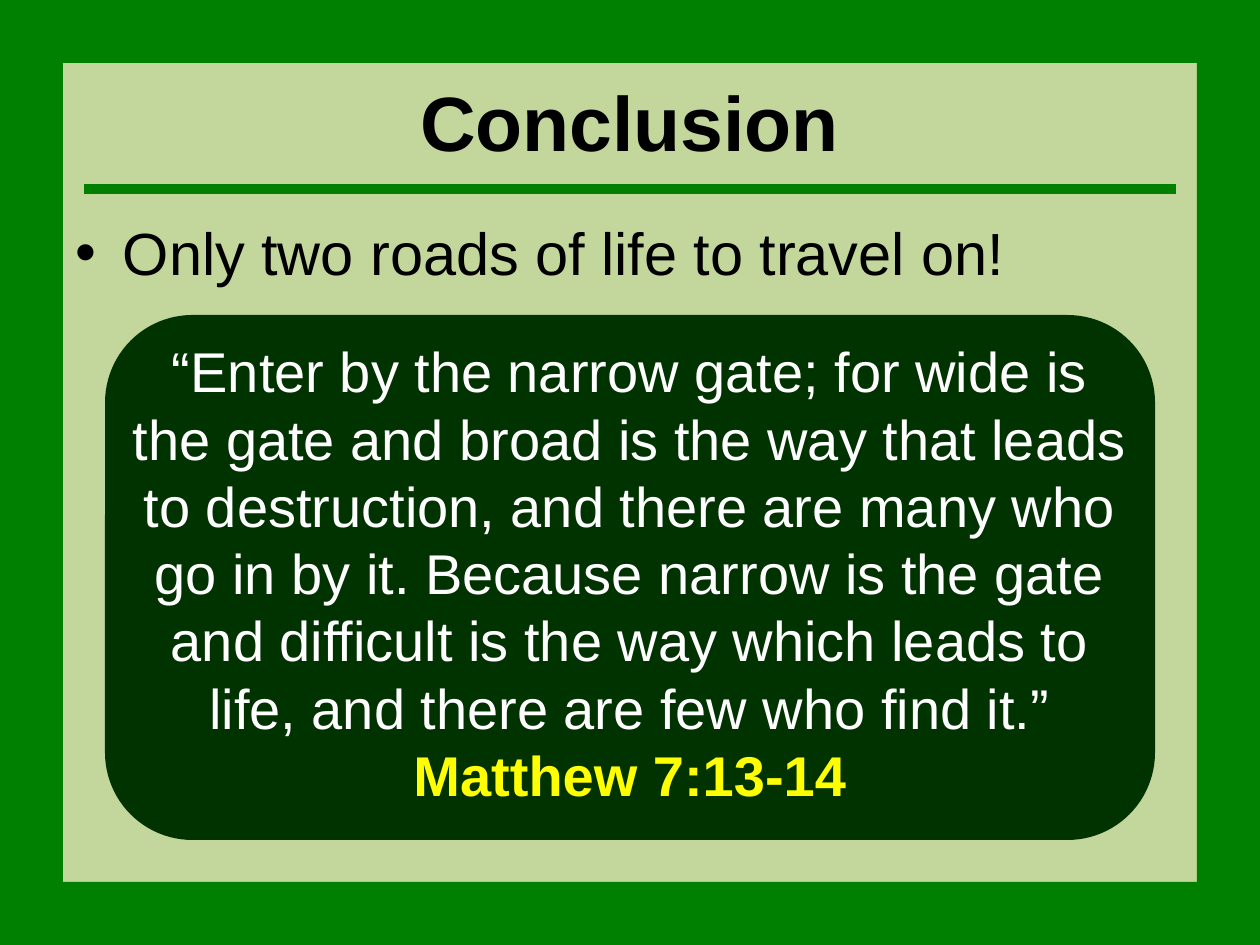
from dataclasses import dataclass

from lxml import etree
from pptx import Presentation
from pptx.dml.color import RGBColor
from pptx.enum.shapes import MSO_CONNECTOR, MSO_SHAPE
from pptx.enum.text import MSO_ANCHOR, MSO_AUTO_SIZE, PP_ALIGN
from pptx.oxml.ns import qn
from pptx.util import Pt

RECT, ROUND = MSO_SHAPE.RECTANGLE, MSO_SHAPE.ROUNDED_RECTANGLE
STRAIGHT = MSO_CONNECTOR.STRAIGHT
CENTER, LEFT = PP_ALIGN.CENTER, PP_ALIGN.LEFT
MIDDLE, TOP = MSO_ANCHOR.MIDDLE, MSO_ANCHOR.TOP
FIXED = MSO_AUTO_SIZE.NONE


@dataclass(frozen=True)
class Theme:
    """Hold the colours, font and type sizes."""
    back: str = "C3D69B"
    edge: str = "008000"
    panel: str = "003300"
    ink: str = "000000"
    light: str = "FFFFFF"
    accent: str = "FFFF00"
    font: str = "Arial"
    title: int = 44
    body: int = 34
    quote: int = 32


THEME = Theme()


def place(item, box):
    """Move an item to a box of left, top, width and height in points."""
    item.left, item.top, item.width, item.height = map(Pt, box)


def paint(fill, color):
    """Set a solid fill."""
    fill.solid()
    fill.fore_color.rgb = RGBColor.from_string(color)


def add_run(para, text, size, color, bold=False):
    """Add one styled run to a paragraph."""
    run = para.add_run()
    run.text = text
    font = run.font
    font.name, font.size, font.bold = THEME.font, Pt(size), bold
    font.color.rgb = RGBColor.from_string(color)


def add_block(slide, kind, box, color):
    """Draw a plain filled shape."""
    block = slide.shapes.add_shape(kind, *map(Pt, box))
    block.shadow.inherit = False
    paint(block.fill, color)
    block.line.fill.background()


def add_frame(slide, box, thick):
    """Draw four bars along the inside of the box."""
    left, top, width, height = box
    bars = (
        (left, top, thick, height),
        (left, top, width, thick),
        (left + width - thick, top, thick, height),
        (left, top + height - thick, width, thick),
    )
    for bar in bars:
        add_block(slide, RECT, bar, THEME.edge)


def add_head(slide, box, text):
    """Fill the title and draw the rule beneath it."""
    left, top, width, height = box
    head = slide.shapes.title
    place(head, box)
    frame = head.text_frame
    frame.auto_size, frame.vertical_anchor = FIXED, MIDDLE
    para = frame.paragraphs[0]
    para.alignment = CENTER
    add_run(para, text, THEME.title, THEME.ink, True)
    inset, base = 12, top + height + 6
    ends = (left + inset, base, left + width - inset, base)
    rule = slide.shapes.add_connector(STRAIGHT, *map(Pt, ends))
    rule.line.width = Pt(6)
    rule.line.color.rgb = RGBColor.from_string(THEME.edge)
    etree.SubElement(rule._element.spPr, qn("a:effectLst"))


def add_list(slide, box, items):
    """Fill the body placeholder with bulleted items."""
    body = slide.placeholders[1]
    place(body, box)
    frame = body.text_frame
    frame.auto_size, frame.vertical_anchor = FIXED, TOP
    for index, text in enumerate(items):
        para = frame.add_paragraph() if index else frame.paragraphs[0]
        para.alignment = LEFT
        para.space_before = Pt(THEME.body * 0.2)
        props = para._p.get_or_add_pPr()
        props.set("marL", str(Pt(27)))
        props.set("indent", str(-Pt(27)))
        etree.SubElement(props, qn("a:buChar")).set("char", "•")
        add_run(para, text, THEME.body, THEME.ink)


def add_quote(slide, box, verse, source):
    """Draw the rounded panel with a verse and its source."""
    left, top, width, height = box
    add_block(slide, ROUND, box, THEME.panel)
    inner = (left + 6, top + 9, width - 12, height - 21)
    frame = slide.shapes.add_textbox(*map(Pt, inner)).text_frame
    frame.word_wrap = True
    parts = ((verse, THEME.light, False), (source, THEME.accent, True))
    for index, (text, color, bold) in enumerate(parts):
        para = frame.add_paragraph() if index else frame.paragraphs[0]
        para.alignment = CENTER
        para.line_spacing = Pt(THEME.quote * 1.2)
        add_run(para, text, THEME.quote, color, bold)


def main():
    """Build and save the slide."""
    deck = Presentation()
    deck.slide_width, deck.slide_height = Pt(720), Pt(540)
    slide = deck.slides.add_slide(deck.slide_layouts[1])
    paint(slide.background.fill, THEME.back)
    add_frame(slide, (0, 0, 720, 540), 36)
    add_head(slide, (36, 36, 648, 66), "Conclusion")
    add_list(slide, (36, 120, 648, 60),
             ["Only two roads of life to travel on!"])
    add_quote(
        slide, (60, 180, 600, 300),
        "“Enter by the narrow gate; for wide is the gate and broad is the "
        "way that leads to destruction, and there are many who go in by it. "
        "Because narrow is the gate and difficult is the way which leads to "
        "life, and there are few who find it.”",
        "Matthew 7:13-14")
    deck.save("out.pptx")


if __name__ == "__main__":
    main()
